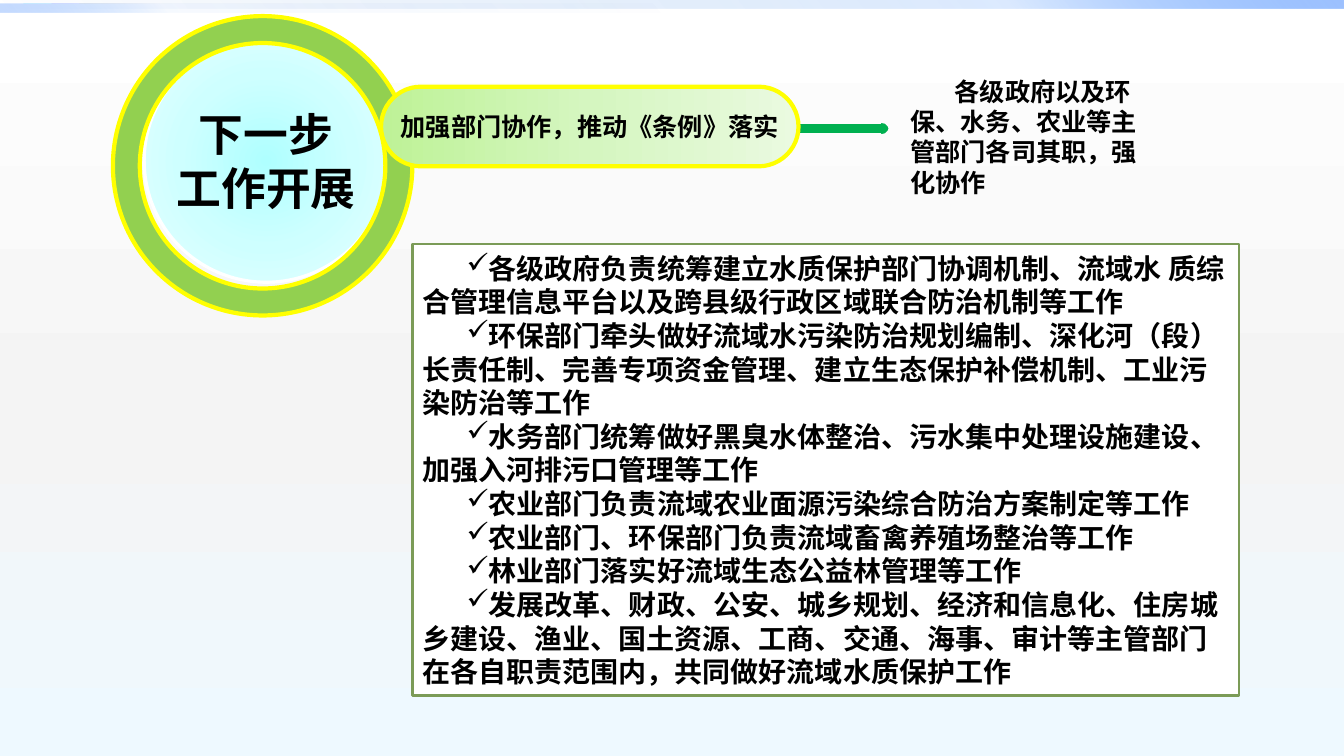
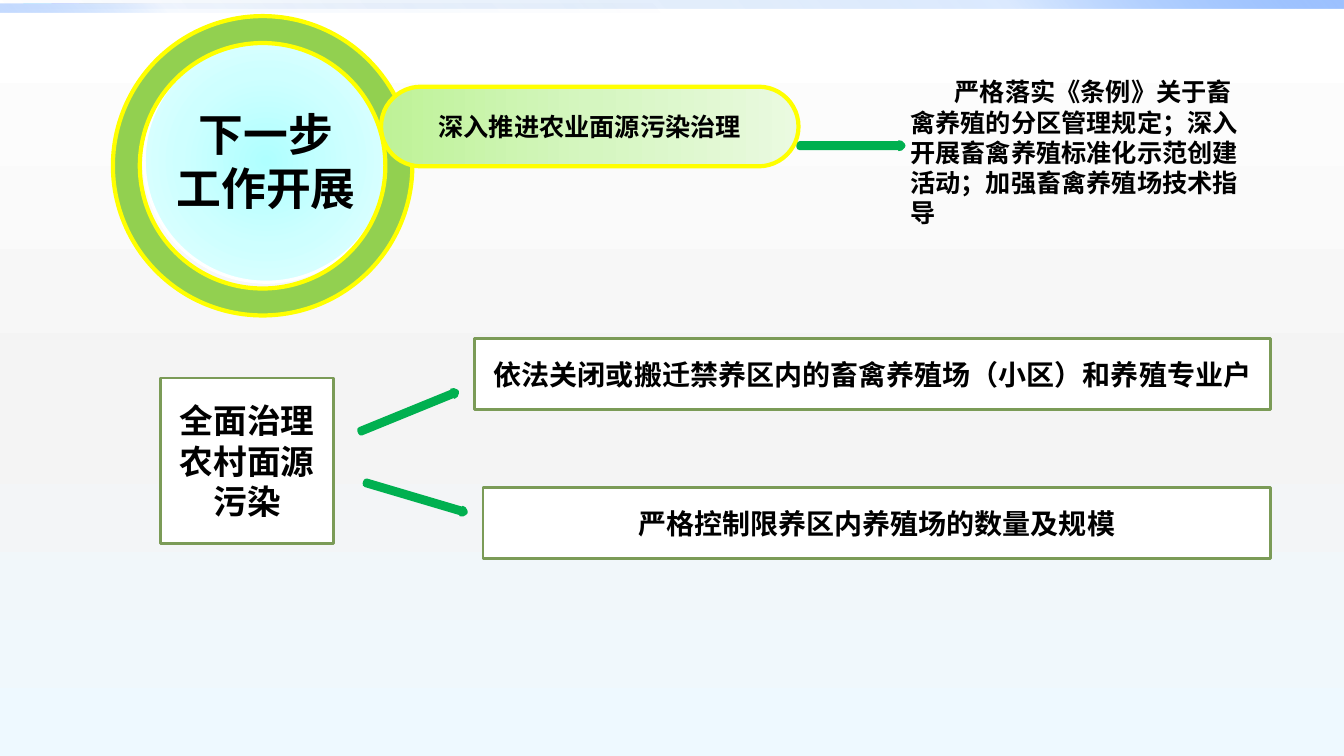
"""Build two slides on the next steps of river water protection."""
from pptx import Presentation
from pptx.dml.color import RGBColor
from pptx.enum.shapes import MSO_SHAPE
from pptx.enum.text import MSO_ANCHOR, PP_ALIGN
from pptx.oxml import parse_xml
from pptx.oxml.ns import nsdecls, qn
from pptx.util import Pt

PX = 9144
WIDE, HIGH = 1333, 750
INDENT = 44
ARIAL, NOTO = "Arial", "Noto Sans CJK SC"

BLACK = RGBColor(0x00, 0x00, 0x00)
WHITE = RGBColor(0xFF, 0xFF, 0xFF)
GRAY = RGBColor(0xF4, 0xF4, 0xF4)
ICE = RGBColor(0xEE, 0xF9, 0xFF)
NAVY = RGBColor(0x00, 0x58, 0xB7)
BLUE = RGBColor(0x4F, 0x95, 0xFF)
SKY = RGBColor(0x9E, 0xC2, 0xFF)
STEEL = RGBColor(0x47, 0x7A, 0xB1)
GREEN = RGBColor(0x00, 0xB0, 0x50)
OLIVE = RGBColor(0x7B, 0x9B, 0x57)
LIME = RGBColor(0x92, 0xD0, 0x50)
YELLOW = RGBColor(0xFF, 0xFF, 0x00)
AQUA = RGBColor(0xAF, 0xFF, 0xFF)
FOAM = RGBColor(0xCE, 0xFF, 0xFF)
MIST = RGBColor(0xE7, 0xFF, 0xFF)
LEAF = RGBColor(0xBE, 0xF2, 0x97)
SPROUT = RGBColor(0xD5, 0xF6, 0xC0)
PALE = RGBColor(0xEA, 0xFA, 0xE0)

PAGE = (90, [(0, WHITE, 100), (55, GRAY, 100), (100, ICE, 100)])
BANDS = [
    ((0, 0, WIDE, 8), (315, [(0, NAVY, 0), (75, BLUE, 20), (100, SKY, 100)])),
    ((0, 4, 667, 8), (135, [(0, NAVY, 0), (75, BLUE, 5), (100, SKY, 60)])),
]
DISC = (None, [(0, AQUA, 100), (50, FOAM, 100), (100, MIST, 100)])
PILL = (0, [(0, LEAF, 100), (50, SPROUT, 100), (100, PALE, 100)])


def shade(fill, root, look):
    """Give a fill a gradient of several stops."""
    angle, stops = look
    fill.gradient()
    marks = "".join(
        f'<a:gs pos="{pos * 1000}"><a:srgbClr val="{color}">'
        f'<a:alpha val="{alpha * 1000}"/></a:srgbClr></a:gs>'
        for pos, color, alpha in stops)
    if angle is None:
        tail = ('<a:path path="circle"><a:fillToRect l="50000" t="50000" '
                'r="50000" b="50000"/></a:path>')
    else:
        tail = f'<a:lin ang="{angle * 60000}" scaled="0"/>'
    old = root.xpath(".//a:gradFill")[0]
    new = parse_xml(f'<a:gradFill {nsdecls("a")} rotWithShape="1">'
                    f'<a:gsLst>{marks}</a:gsLst>{tail}</a:gradFill>')
    old.getparent().replace(old, new)


def draw(slide, kind, box, fill=None, line=None, weight=2, text="", size=20,
         font=ARIAL, align=PP_ALIGN.CENTER, wrap=True, indent=0, bullet=""):
    """Add a shape, or a text box when kind is None, with its text."""
    place = [n * PX for n in box]
    if kind is None:
        shape = slide.shapes.add_textbox(*place)
    else:
        shape = slide.shapes.add_shape(kind, *place)
        shape.shadow.inherit = False
        if isinstance(fill, RGBColor):
            shape.fill.solid()
            shape.fill.fore_color.rgb = fill
        else:
            shade(shape.fill, shape.element, fill)
        if line is None:
            shape.line.fill.background()
        else:
            shape.line.color.rgb = line
            shape.line.width = Pt(weight)
    if not text:
        return shape
    frame = shape.text_frame
    frame.text = text
    frame.word_wrap = wrap
    frame.vertical_anchor = MSO_ANCHOR.MIDDLE
    for para in frame.paragraphs:
        para.alignment = align
        props = para._p.get_or_add_pPr()
        props.set("marL", "0")
        props.set("indent", str(indent * PX))
        if bullet:
            props.append(parse_xml(
                f'<a:buChar {nsdecls("a")} char="{bullet}"/>'))
        for run in para.runs:
            run.font.size = Pt(size)
            run.font.bold = True
            run.font.color.rgb = BLACK
            run.font.name = font
            east = run.font._element.makeelement(qn("a:ea"), {"typeface": NOTO})
            run.font._element.append(east)
    return shape


deck = Presentation()
deck.slide_width, deck.slide_height = WIDE * PX, HIGH * PX

TOPICS = [
    ("加强部门协作，推动《条例》落实",
     "各级政府以及环保、水务、农业等主管部门各司其职，强化协作",
     (893, 70, 257, 131), [(776, 125, 0)]),
    ("深入推进农业面源污染治理",
     "严格落实《条例》关于畜禽养殖的分区管理规定；深入开展畜禽养殖标准化示范创建活动；加强畜禽养殖场技术指导",
     (893, 70, 352, 162), [(793, 142, 0), (354, 406, 337.8), (361, 491, 16.5)]),
]

slides = []
for topic, note, area, arrows in TOPICS:
    slide = deck.slides.add_slide(deck.slide_layouts[6])
    slides.append(slide)
    shade(slide.background.fill, slide.element, PAGE)
    for box, look in BANDS:
        draw(slide, MSO_SHAPE.RECTANGLE, box, look)
    for left, top, turn in arrows:
        arrow = draw(slide, MSO_SHAPE.RIGHT_ARROW, (left, top, 102, 5),
                     STEEL, GREEN, 4.5)
        arrow.rotation = turn
    draw(slide, None, area, text=note, size=18, align=PP_ALIGN.LEFT,
         indent=INDENT)
    draw(slide, MSO_SHAPE.OVAL, (143, 39, 242, 241), DISC, WHITE, 2.25,
         "下一步\n工作开展", 32, wrap=False)
    ring = draw(slide, MSO_SHAPE.DONUT, (112, 16, 297, 297), LIME, YELLOW, 3)
    ring.adjustments[0] = 0.09
    pill = draw(slide, MSO_SHAPE.ROUNDED_RECTANGLE, (378, 86, 414, 79), PILL,
                YELLOW, 3, topic, 18, wrap=False)
    pill.adjustments[0] = 0.5

DUTIES = [
    "各级政府负责统筹建立水质保护部门协调机制、流域水 质综合管理信息平台以及跨县级行政区域联合防治机制等工作",
    "环保部门牵头做好流域水污染防治规划编制、深化河（段）长责任制、完善专项资金管理、建立生态保护补偿机制、工业污染防治等工作",
    "水务部门统筹做好黑臭水体整治、污水集中处理设施建设、加强入河排污口管理等工作",
    "农业部门负责流域农业面源污染综合防治方案制定等工作",
    "农业部门、环保部门负责流域畜禽养殖场整治等工作",
    "林业部门落实好流域生态公益林管理等工作",
    "发展改革、财政、公安、城乡规划、经济和信息化、住房城乡建设、渔业、国土资源、工商、交通、海事、审计等主管部门在各自职责范围内，共同做好流域水质保护工作",
]
draw(slides[0], MSO_SHAPE.RECTANGLE, (409, 242, 820, 448), WHITE, OLIVE,
     text="\n".join(DUTIES), font=NOTO, align=PP_ALIGN.LEFT, indent=INDENT,
     bullet="✓")

BOXES = [
    ((471, 336, 789, 70), "依法关闭或搬迁禁养区内的畜禽养殖场（小区）和养殖专业户", 20, ARIAL),
    ((479, 484, 781, 70), "严格控制限养区内养殖场的数量及规模", 20, ARIAL),
    ((159, 375, 172, 164), "全面治理\n农村面源污染", 24, NOTO),
]
for box, text, size, font in BOXES:
    draw(slides[1], MSO_SHAPE.RECTANGLE, box, WHITE, OLIVE, text=text,
         size=size, font=font)

deck.save("out.pptx")
